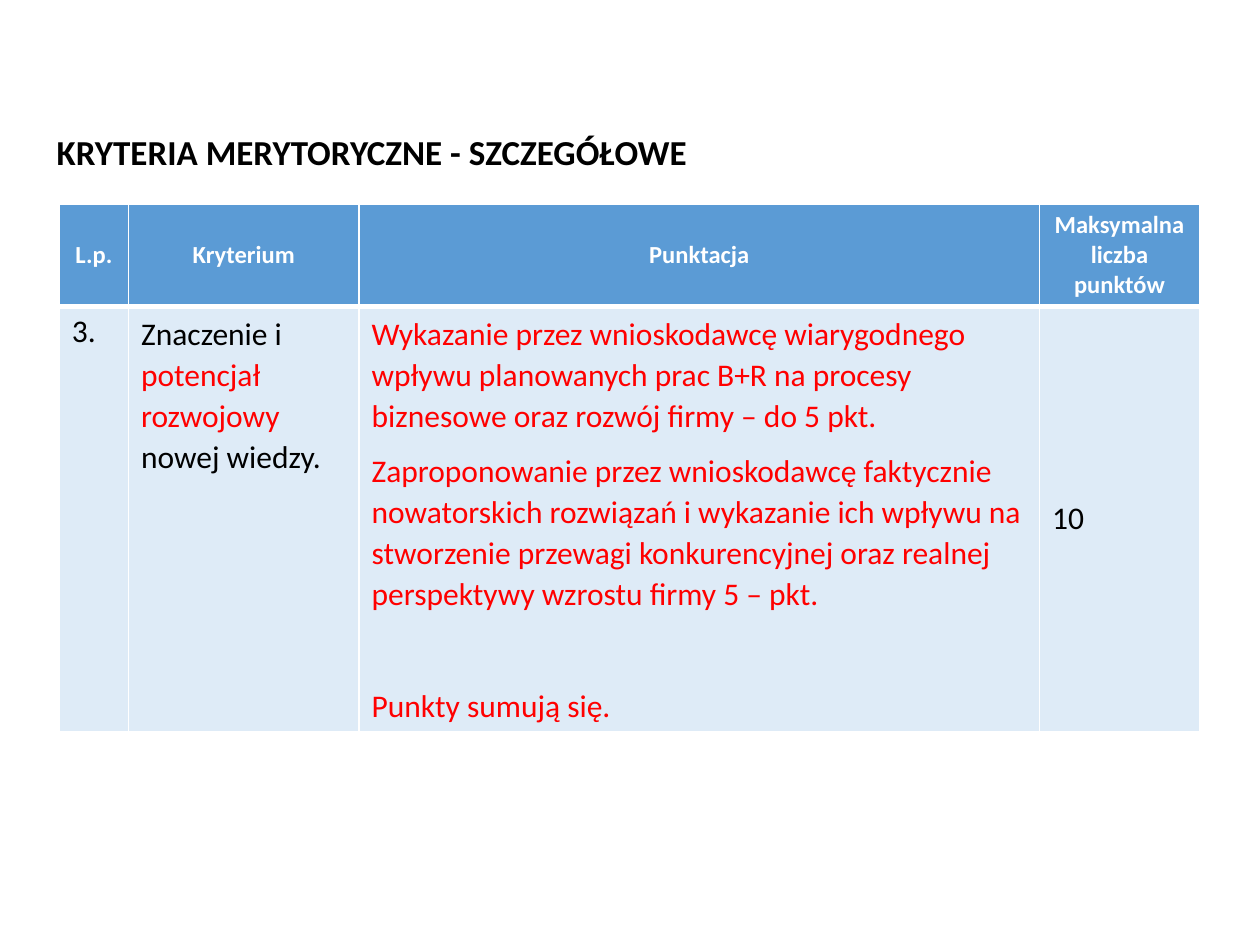
import pptx
import pptx.util
import pptx.dml.color
import pptx.enum.text
import pptx.oxml.ns
from dataclasses import dataclass
from lxml import etree

Inches, Pt = pptx.util.Inches, pptx.util.Pt
ALIGN, ANCHOR = pptx.enum.text.PP_ALIGN, pptx.enum.text.MSO_ANCHOR


@dataclass(frozen=True)
class Theme:
    font: str = "Calibri"
    text: str = "000000"
    accent: str = "FF0000"
    white: str = "FFFFFF"
    header_fill: str = "5B9BD5"
    body_fill: str = "DEEBF7"
    title_size: int = 20
    header_size: int = 14
    body_size: int = 18


THEME = Theme()

# Content: a cell is a list of paragraphs, a paragraph a list of (text, colour) runs
TITLE = "KRYTERIA MERYTORYCZNE - SZCZEGÓŁOWE"
HEADERS = ["L.p.", "Kryterium", "Punktacja", "Maksymalna liczba punktów"]
NUMBER = [[("3.", THEME.text)]]
CRITERION = [[("Znaczenie i ", THEME.text),
              ("potencjał rozwojowy ", THEME.accent),
              ("nowej wiedzy.", THEME.text)]]
SCORING = [[(text, THEME.accent)] for text in (
    "Wykazanie przez wnioskodawcę wiarygodnego wpływu planowanych prac B+R "
    "na procesy biznesowe oraz rozwój firmy – do 5 pkt.",
    "Zaproponowanie przez wnioskodawcę faktycznie nowatorskich rozwiązań "
    "i wykazanie ich wpływu na stworzenie przewagi konkurencyjnej oraz realnej "
    "perspektywy wzrostu firmy 5 – pkt.",
    "Punkty sumują się.",
)]
MAXIMUM = [[("10", THEME.text)]]

# Layout in inches
TITLE_BOX = (0.35, 0.98, 6.03, 0.44)
TABLE_LEFT, TABLE_TOP = 0.47, 1.62
COLUMNS = [0.55, 1.83, 5.4, 1.27]
ROWS = [0.79, 3.31]


def rgb(value):
    return pptx.dml.color.RGBColor.from_string(value)


def style_font(font, size, bold=False, color=None):
    font.name, font.size, font.bold = THEME.font, Pt(size), bold
    if color:
        font.color.rgb = rgb(color)


def style_cell(cell, fill, bottom_width, anchor):
    """Set white borders, fill and anchor of a cell."""
    properties = cell._tc.get_or_add_tcPr()
    for side, width in (("L", 1), ("R", 1), ("T", 1), ("B", bottom_width)):
        line = etree.SubElement(properties, pptx.oxml.ns.qn(f"a:ln{side}"), w=str(Pt(width)))
        solid = etree.SubElement(line, pptx.oxml.ns.qn("a:solidFill"))
        etree.SubElement(solid, pptx.oxml.ns.qn("a:srgbClr"), val=THEME.white)
    cell.fill.solid()
    cell.fill.fore_color.rgb = rgb(fill)
    cell.vertical_anchor = anchor


def write_body(cell, paragraphs, spaced):
    frame = cell.text_frame
    for index, runs in enumerate(paragraphs):
        paragraph = frame.add_paragraph() if index else frame.paragraphs[0]
        style_font(paragraph.font, THEME.body_size)
        if spaced:
            paragraph.line_spacing, paragraph.space_after = 1.07, Pt(8)
        for text, color in runs:
            run = paragraph.add_run()
            run.text = text
            style_font(run.font, THEME.body_size, color=color)
    return frame


def main():
    presentation = pptx.Presentation()
    presentation.slide_width, presentation.slide_height = Inches(10), Inches(7.5)
    slide = presentation.slides.add_slide(presentation.slide_layouts[5])

    # Title
    title = slide.shapes.title
    title.left, title.top, title.width, title.height = map(Inches, TITLE_BOX)
    title.text_frame.text = TITLE
    title.text_frame.word_wrap = True
    title.text_frame.auto_size = pptx.enum.text.MSO_AUTO_SIZE.NONE
    title.text_frame.vertical_anchor = ANCHOR.MIDDLE
    paragraph = title.text_frame.paragraphs[0]
    paragraph.alignment = ALIGN.LEFT
    style_font(paragraph.font, THEME.title_size, True, THEME.text)

    # Table grid
    table = slide.shapes.add_table(
        len(ROWS), len(COLUMNS), Inches(TABLE_LEFT), Inches(TABLE_TOP),
        Inches(sum(COLUMNS)), Inches(sum(ROWS))).table
    for column, width in zip(table.columns, COLUMNS):
        column.width = Inches(width)
    for row, height in zip(table.rows, ROWS):
        row.height = Inches(height)

    # Header row
    for cell, text in zip(table.rows[0].cells, HEADERS):
        style_cell(cell, THEME.header_fill, 3, ANCHOR.MIDDLE)
        cell.text = text
        paragraph = cell.text_frame.paragraphs[0]
        paragraph.alignment = ALIGN.CENTER
        style_font(paragraph.font, THEME.header_size, True, THEME.white)

    # Criterion row
    body = [(NUMBER, False, ANCHOR.TOP), (CRITERION, True, ANCHOR.TOP),
            (SCORING, True, ANCHOR.TOP), (MAXIMUM, False, ANCHOR.MIDDLE)]
    for cell, (paragraphs, spaced, anchor) in zip(table.rows[1].cells, body):
        style_cell(cell, THEME.body_fill, 1, anchor)
        write_body(cell, paragraphs, spaced)

    # The summing rule stands apart from the scoring above it
    table.cell(1, 2).text_frame.paragraphs[-1].space_before = Pt(32)

    presentation.save("out.pptx")


if __name__ == "__main__":
    main()
